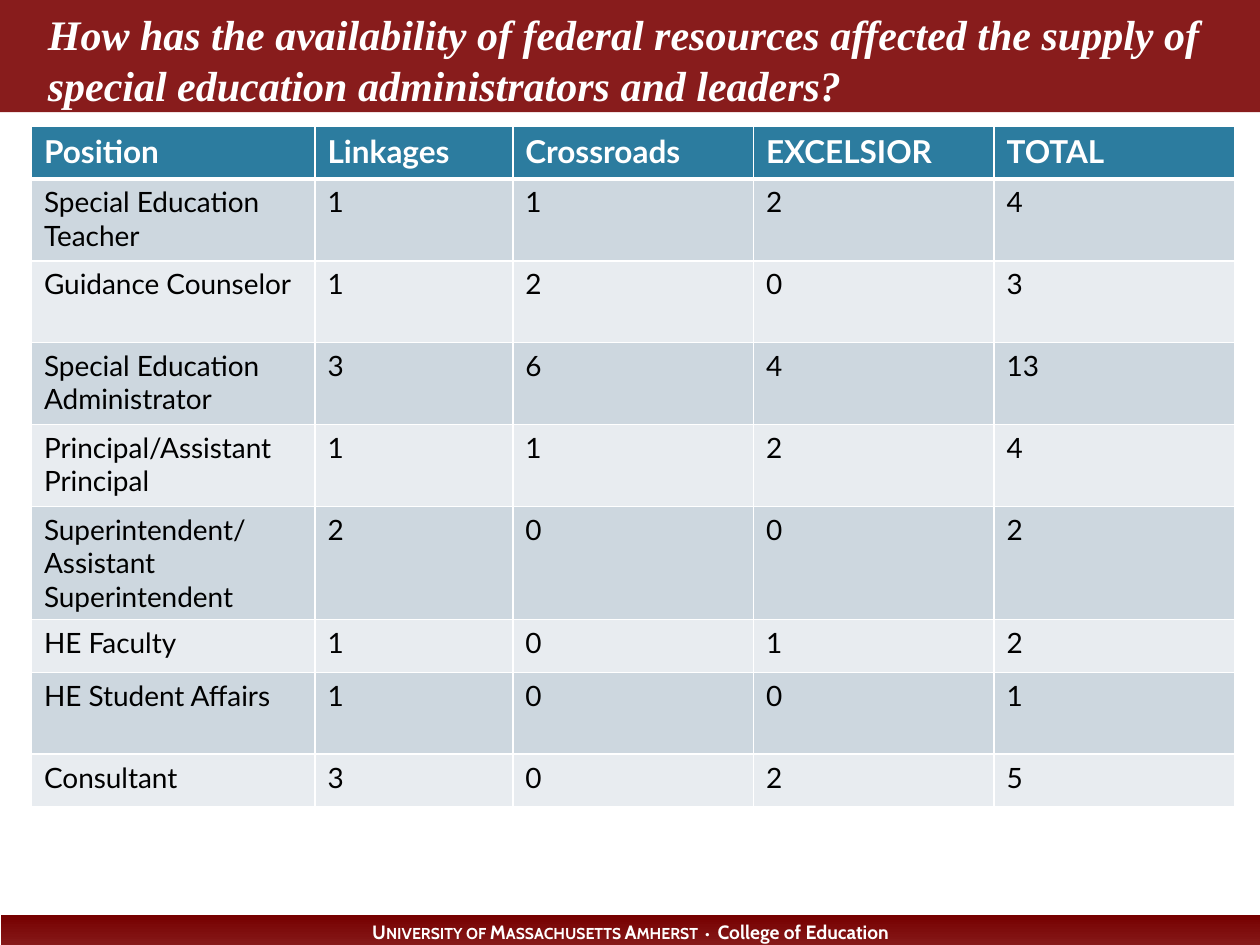
from lxml import etree
from pptx import Presentation
from pptx.dml.color import RGBColor
from pptx.enum import shapes, text
from pptx.oxml import ns
from pptx.util import Inches, Pt

# Content
TITLE = ("How has the availability of federal resources affected the supply "
         "of special education administrators and leaders?")
HEADER = ["Position", "Linkages", "Crossroads", "EXCELSIOR", "TOTAL"]
ROWS = [  # row height, position, counts
    (0.65, "Special Education Teacher", 1, 1, 2, 4),
    (0.65, "Guidance Counselor", 1, 2, 0, 3),
    (0.65, "Special Education Administrator", 3, 6, 4, 13),
    (0.65, "Principal/Assistant Principal", 1, 1, 2, 4),
    (0.65, "Superintendent/ Assistant Superintendent", 2, 0, 0, 2),
    (0.42, "HE Faculty", 1, 0, 1, 2),
    (0.65, "HE Student Affairs", 1, 0, 0, 1),
    (0.42, "Consultant", 3, 0, 2, 5),
]
FOOTER = [("U", 11), ("NIVERSITY OF ", 9), ("M", 11), ("ASSACHUSETTS ", 9),
          ("A", 11), ("MHERST  • ", 9), (" College of Education", 11)]
COLUMNS = [2.25, 1.57, 1.91, 1.91, 1.91]
HEADER_HEIGHT = 0.42
WHITE, BLACK, MAROON, DARK_MAROON = "FFFFFF", "000000", "881C1C", "760000"
TEAL, BANDS = "2C7C9F", ("CDD7DF", "E8ECF0")


def colour(value):
    return RGBColor.from_string(value)


def add_span(para, words, face, size, ink=WHITE, bold=True, italic=False):
    span = para.add_run()
    span.text = words
    font = span.font
    font.name, font.size, font.bold, font.italic = face, Pt(size), bold, italic
    font.color.rgb = colour(ink)


def add_bar(page, left, top, width, height):
    bar = page.shapes.add_shape(shapes.MSO_SHAPE.RECTANGLE, Inches(left),
                                Inches(top), Inches(width), Inches(height))
    bar.shadow.inherit = False
    bar.line.fill.background()
    return bar


def set_borders(cell, bottom):
    props = cell._tc.get_or_add_tcPr()
    for place, (side, width) in enumerate(
            [("lnL", 1), ("lnR", 1), ("lnT", 1), ("lnB", bottom)]):
        line = etree.Element(ns.qn("a:" + side), w=str(Pt(width)))
        fill = etree.SubElement(line, ns.qn("a:solidFill"))
        etree.SubElement(fill, ns.qn("a:srgbClr"), val=WHITE)
        props.insert(place, line)


deck = Presentation()
deck.slide_width, deck.slide_height = Inches(10), Inches(7.5)
page = deck.slides.add_slide(deck.slide_layouts[5])

# Footer bar
footer = add_bar(page, 0.01, 7.26, 9.99, 0.27)
footer.fill.gradient()
footer.fill.gradient_angle = 270
for stop, (position, value) in zip(footer.fill.gradient_stops,
                                   [(0, DARK_MAROON), (1, MAROON)]):
    stop.position = position
    stop.color.rgb = colour(value)
footer.text_frame.vertical_anchor = text.MSO_ANCHOR.MIDDLE
para = footer.text_frame.paragraphs[0]
para.alignment = text.PP_ALIGN.CENTER
for words, size in FOOTER:
    add_span(para, words, "Cabin", size)

# Title on its band
band = add_bar(page, 0, 0, 10, 0.89)
band.fill.solid()
band.fill.fore_color.rgb = colour(MAROON)
title = page.shapes.title
title.element.addprevious(footer.element)
title.element.addprevious(band.element)
title.left, title.top = Inches(0.28), Inches(0)
title.width, title.height = Inches(9.39), Inches(0.92)
frame = title.text_frame
frame.auto_size = text.MSO_AUTO_SIZE.NONE
frame.word_wrap = True
frame.vertical_anchor = text.MSO_ANCHOR.BOTTOM
para = frame.paragraphs[0]
para.alignment = text.PP_ALIGN.LEFT
add_span(para, TITLE, "Times New Roman", 24, italic=True)

# Table of positions
heights = [HEADER_HEIGHT] + [row[0] for row in ROWS]
table = page.shapes.add_table(
    len(heights), len(COLUMNS), Inches(0.25), Inches(1),
    Inches(sum(COLUMNS)), Inches(sum(heights))).table
for column, width in zip(table.columns, COLUMNS):
    column.width = Inches(width)
for row, height in zip(table.rows, heights):
    row.height = Inches(height)
for r, values in enumerate([HEADER] + [row[1:] for row in ROWS]):
    heading = r == 0
    for c, value in enumerate(values):
        cell = table.cell(r, c)
        cell.fill.solid()
        cell.fill.fore_color.rgb = colour(TEAL if heading else BANDS[(r - 1) % 2])
        set_borders(cell, 3 if heading else 1)
        add_span(cell.text_frame.paragraphs[0], str(value), "Lato",
                 18 if heading else 16, WHITE if heading else BLACK, heading)

deck.save("out.pptx")
